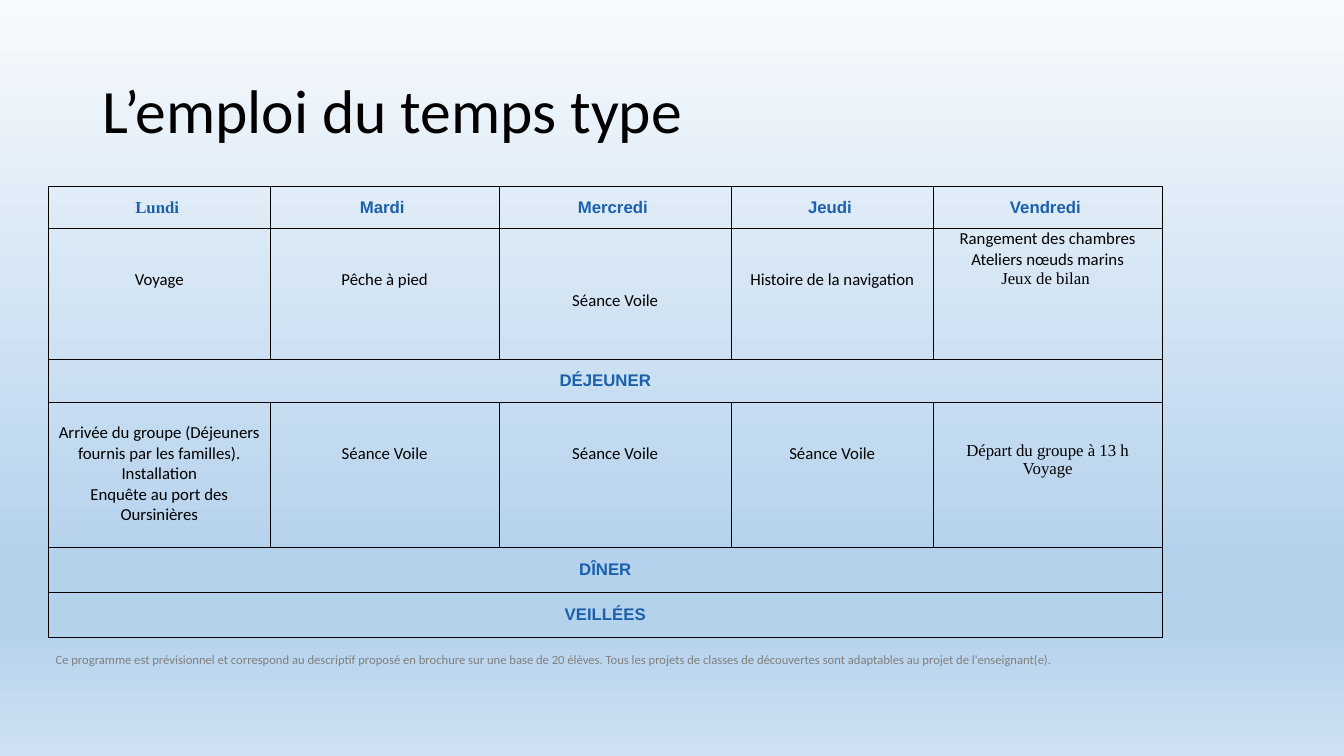
import pptx
import pptx.dml.color
import pptx.enum.text
import pptx.oxml
import pptx.oxml.ns
import pptx.util
from pptx.util import Cm, Pt

TITLE = "L’emploi du temps type"
DAYS = ["Lundi ", "Mardi ", "Mercredi ", "Jeudi ", "Vendredi "]
DAY_FONTS = ["Times New Roman", "Arial", "Arial", "Arial", "Arial"]
SERIF, SANS = "Times New Roman", "Calibri"
# Each activity cell: lines left free above, then (text, font) paragraphs
MORNING = [
    (2, [("Voyage", SANS)]),
    (2, [("Pêche à pied", SANS)]),
    (3, [("Séance Voile", SANS)]),
    (2, [("Histoire de la navigation", SANS)]),
    (0, [("Rangement des chambres", SANS), ("Ateliers nœuds marins", SANS),
         ("Jeux de bilan ", SERIF)]),
]
SAILING = (2, [("Séance Voile", SANS)])
AFTERNOON = [
    (1, [("Arrivée du groupe (Déjeuners fournis par les familles). Installation", SANS),
         ("Enquête au port des Oursinières", SANS)]),
    SAILING, SAILING, SAILING,
    (2, [("Départ du groupe à 13 h", SERIF), ("Voyage", SERIF)]),
]
ACTIVITIES = {1: MORNING, 3: AFTERNOON}
BANNERS = {2: "DÉJEUNER", 4: "DÎNER", 5: "VEILLÉES"}
NOTE = ("Ce programme est prévisionnel et correspond au descriptif proposé en brochure "
        "sur une base de 20 élèves. Tous les projets de classes de découvertes sont "
        "adaptables au projet de l'enseignant(e).")

BLACK, BLUE, GREY = "000000", "1B60AB", "808080"
SKY = [(0, "F7FAFD"), (74, "B5D2EC"), (83, "B5D2EC"), (100, "CEE1F2")]
COLUMN_WIDTHS = [5.59, 5.77, 5.85, 5.09, 5.77]
ROW_HEIGHTS = [1.06, 3.3, 1.08, 3.65, 1.14, 1.14, 1.14]
LINE_HEIGHTS = {SANS: 0.52, SERIF: 0.49}
NOTE_ROW = len(ROW_HEIGHTS) - 1
CENTER = pptx.enum.text.PP_ALIGN.CENTER
LEFT = pptx.enum.text.PP_ALIGN.LEFT
MIDDLE = pptx.enum.text.MSO_ANCHOR.MIDDLE
TOP = pptx.enum.text.MSO_ANCHOR.TOP


def style(paragraph, font, size, color, bold=False, align=CENTER):
    paragraph.alignment = align
    for run in paragraph.runs:
        run.font.name, run.font.size, run.font.bold = font, Pt(size), bold
        run.font.color.rgb = pptx.dml.color.RGBColor.from_string(color)


def paint_sky(slide):
    """Fill the background with a vertical gradient."""
    fill = slide.background.fill
    fill.gradient()
    fill.gradient_angle = 270
    stops = slide.element.find(".//" + pptx.oxml.ns.qn("a:gsLst"))
    for stop in list(stops):
        stops.remove(stop)
    for percent, color in SKY:
        stops.append(pptx.oxml.parse_xml(
            f'<a:gs {pptx.oxml.ns.nsdecls("a")} pos="{percent * 1000}">'
            f'<a:srgbClr val="{color}"/></a:gs>'))


def set_borders(cell, drawn_sides):
    properties = cell._tc.get_or_add_tcPr()
    for position, side in enumerate("LRTB"):
        paint = (f'<a:solidFill><a:srgbClr val="{BLACK}"/></a:solidFill>'
                 if side in drawn_sides else "<a:noFill/>")
        properties.insert(position, pptx.oxml.parse_xml(
            f'<a:ln{side} {pptx.oxml.ns.nsdecls("a")} w="{Pt(1)}">{paint}</a:ln{side}>'))


def write_cell(cell, lines, size, color, bold=False, align=CENTER, anchor=MIDDLE):
    cell.text_frame.text = "\n".join(text for text, font in lines)
    for paragraph, (text, font) in zip(cell.text_frame.paragraphs, lines):
        style(paragraph, font, size, color, bold, align)
    cell.vertical_anchor = anchor


def add_timetable(slide):
    timetable = slide.shapes.add_table(
        len(ROW_HEIGHTS), len(DAYS), Cm(1.22), Cm(4.7),
        Cm(sum(COLUMN_WIDTHS)), Cm(sum(ROW_HEIGHTS))).table
    timetable.first_row = timetable.horz_banding = False
    for column, width in zip(timetable.columns, COLUMN_WIDTHS):
        column.width = Cm(width)
    for row_index, height in enumerate(ROW_HEIGHTS):
        timetable.rows[row_index].height = Cm(height)
        for column_index in range(len(DAYS)):
            cell = timetable.cell(row_index, column_index)
            cell.fill.background()
            cell.margin_left = cell.margin_right = Cm(0.18)
            cell.margin_top = cell.margin_bottom = 0
            set_borders(cell, "T" if row_index == NOTE_ROW else "LRTB")

    for column_index, (day, font) in enumerate(zip(DAYS, DAY_FONTS)):
        write_cell(timetable.cell(0, column_index), [(day, font)], 12, BLUE, bold=True)
    for row_index, activities in ACTIVITIES.items():
        for column_index, (free_lines, lines) in enumerate(activities):
            cell = timetable.cell(row_index, column_index)
            write_cell(cell, lines, 12, BLACK, anchor=TOP)
            cell.margin_top = Cm(free_lines * LINE_HEIGHTS[lines[0][1]])
    for row_index in [*BANNERS, NOTE_ROW]:
        timetable.cell(row_index, 0).merge(timetable.cell(row_index, len(DAYS) - 1))
    for row_index, meal in BANNERS.items():
        write_cell(timetable.cell(row_index, 0), [(meal, "Arial")], 12, BLUE, bold=True)
    write_cell(timetable.cell(NOTE_ROW, 0), [(NOTE, SANS)], 9, GREY, align=LEFT)


def main():
    deck = pptx.Presentation()
    deck.slide_width, deck.slide_height = Cm(33.87), Cm(19.05)
    slide = deck.slides.add_slide(deck.slide_layouts[5])
    paint_sky(slide)

    title = slide.shapes.title
    title.left, title.top, title.width, title.height = Cm(2.34), Cm(1.02), Cm(29.21), Cm(3.68)
    title.text_frame.text = TITLE
    title.text_frame.vertical_anchor = MIDDLE
    heading = title.text_frame.paragraphs[0]
    style(heading, SANS, 44, BLACK, align=LEFT)
    heading.line_spacing = 0.9

    add_timetable(slide)
    deck.save("out.pptx")


if __name__ == "__main__":
    main()
